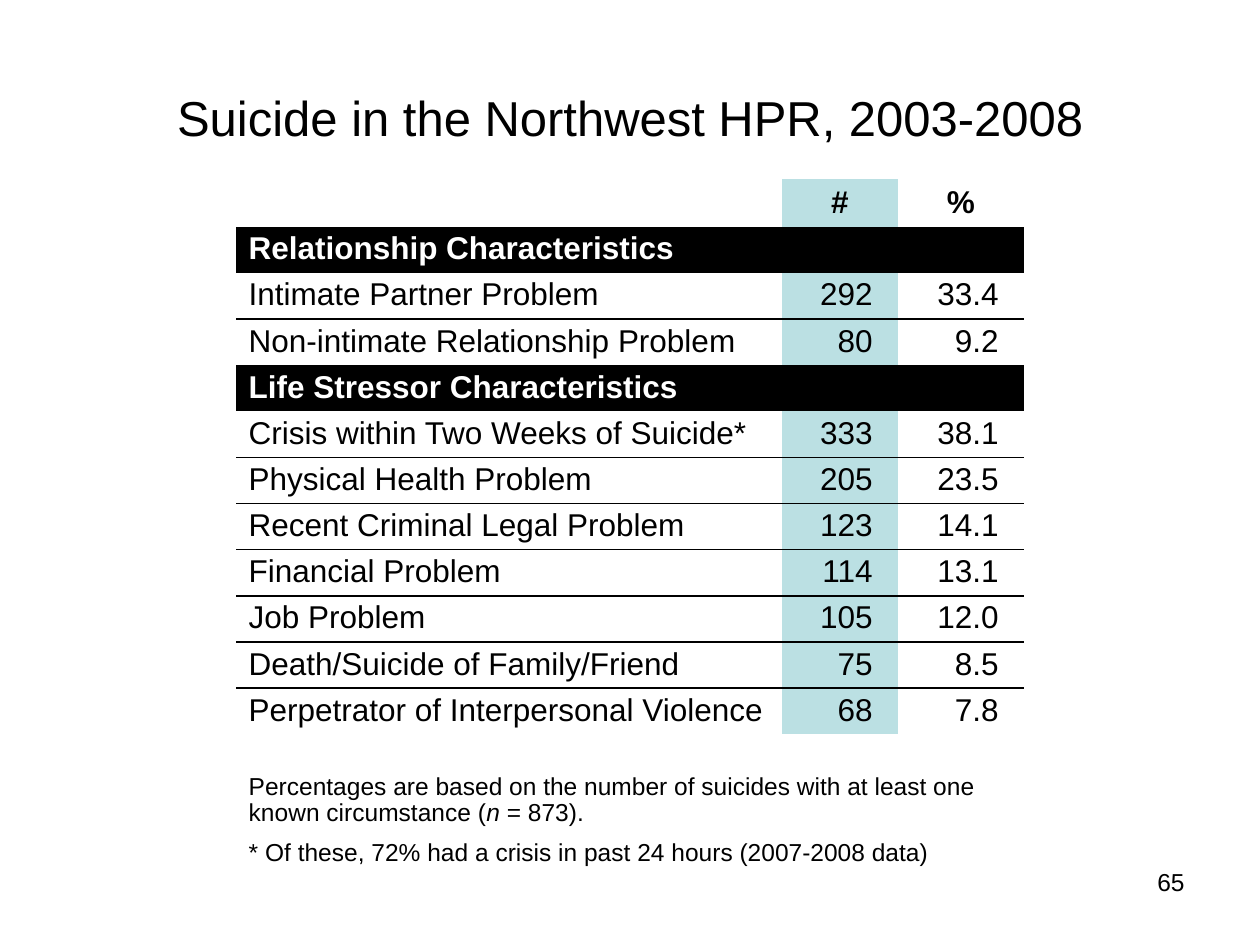
"""Build a slide with a table of suicide circumstances."""
from lxml import etree
from pptx import Presentation
from pptx.dml.color import RGBColor
from pptx.enum import text
from pptx.oxml.ns import qn
from pptx.util import Cm, Pt

COLORS = {"ink": "000000", "paper": "FFFFFF", "tint": "BBE0E3"}
FONT = "Arial"
LEFT, CENTER, RIGHT = text.PP_ALIGN.LEFT, text.PP_ALIGN.CENTER, text.PP_ALIGN.RIGHT

TITLE = "Suicide in the Northwest HPR, 2003-2008"
PAGE = "65"
HEAD = ("", "#", "%")
GROUPS = [
    ("Relationship Characteristics", [
        ("Intimate Partner Problem", "292", "33.4"),
        ("Non-intimate Relationship Problem", "80", "9.2"),
    ]),
    ("Life Stressor Characteristics", [
        ("Crisis within Two Weeks of Suicide*", "333", "38.1"),
        ("Physical Health Problem", "205", "23.5"),
        ("Recent Criminal Legal Problem", "123", "14.1"),
        ("Financial Problem", "114", "13.1"),
        ("Job Problem", "105", "12.0"),
        ("Death/Suicide of Family/Friend", "75", "8.5"),
        ("Perpetrator of Interpersonal Violence", "68", "7.8"),
    ]),
]
NOTES = [
    [("Percentages are based on the number of suicides with at least one "
      "known circumstance (", False), ("n ", True), ("= 873).", False)],
    [("* Of these, 72% had a crisis in past 24 hours (2007-2008 data)", False)],
]
COL_WIDTHS = (11, 2.34, 2.54)
HEAD_H, BODY_H, SPACER_H, NOTE_HS = 0.97, 0.93, 0.6, (1.4, 0.8)


def add_run(p, words, size, color="ink", bold=False, italic=False):
    r = p.add_run()
    r.text = words
    f = r.font
    f.name, f.size, f.bold, f.italic = FONT, Pt(size), bold, italic
    f.color.rgb = RGBColor.from_string(COLORS[color])


def set_borders(cell, top, bottom):
    tc_pr = cell._tc.get_or_add_tcPr()
    for side, ruled in (("L", False), ("R", False), ("T", top), ("B", bottom)):
        ln = etree.SubElement(tc_pr, qn(f"a:ln{side}"), w=str(Pt(1)))
        if ruled:
            fill = etree.SubElement(ln, qn("a:solidFill"))
            etree.SubElement(fill, qn("a:srgbClr"), val=COLORS["ink"])
        else:
            etree.SubElement(ln, qn("a:noFill"))


def fill_cell(cell, runs, size=18, align=LEFT, fill=None, color="ink",
              bold=False, right=0.25, top=False, bottom=False):
    set_borders(cell, top, bottom)
    if fill:
        cell.fill.solid()
        cell.fill.fore_color.rgb = RGBColor.from_string(COLORS[fill])
    else:
        cell.fill.background()
    cell.vertical_anchor = text.MSO_ANCHOR.BOTTOM
    cell.margin_right = Cm(right)
    p = cell.text_frame.paragraphs[0]
    p.alignment, p.line_spacing = align, 0.95
    for words, italic in runs:
        add_run(p, words, size, color, bold, italic)
    if not runs:
        etree.SubElement(p._p, qn("a:endParaRPr"), sz="600")


def fill_row(table, i, values, **style):
    for j, value in enumerate(values):
        number = {"align": RIGHT, "right": 0.51} if j else {}
        fill_cell(table.cell(i, j), [(value, False)] if value else [],
                  fill="tint" if j == 1 else None, **{**number, **style})


def fill_span(table, i, runs, **style):
    for j in range(len(COL_WIDTHS)):
        fill_cell(table.cell(i, j), [] if j else runs, right=0, **style)
    table.cell(i, 0).merge(table.cell(i, len(COL_WIDTHS) - 1))


def add_circumstances(s):
    body_count = sum(1 + len(rows) for _, rows in GROUPS)
    heights = [HEAD_H] + [BODY_H] * body_count + [SPACER_H, *NOTE_HS]
    table = s.shapes.add_table(len(heights), len(COL_WIDTHS), Cm(4.76), Cm(3.6),
                               Cm(sum(COL_WIDTHS)), Cm(sum(heights))).table
    table.first_row = table.horz_banding = False
    for col, width in zip(table.columns, COL_WIDTHS):
        col.width = Cm(width)
    for row, height in zip(table.rows, heights):
        row.height = Cm(height)

    fill_row(table, 0, HEAD, align=CENTER, bold=True, right=0.25)
    i = 1
    for name, rows in GROUPS:
        fill_span(table, i, [(name, False)], fill="ink", color="paper", bold=True)
        for k, values in enumerate(rows):
            fill_row(table, i + 1 + k, values, top=k > 0, bottom=k < len(rows) - 1)
        i += 1 + len(rows)
    for j in range(len(COL_WIDTHS)):
        fill_cell(table.cell(i, j), [])
    for k, runs in enumerate(NOTES, i + 1):
        fill_span(table, k, runs, size=14)


def main():
    prs = Presentation()
    prs.slide_width, prs.slide_height = Cm(25.4), Cm(19.05)
    s = prs.slides.add_slide(prs.slide_layouts[5])

    title = s.shapes.title
    title.left, title.top, title.width, title.height = Cm(1.27), Cm(0.76), Cm(22.86), Cm(3.18)
    tf = title.text_frame
    tf.vertical_anchor = text.MSO_ANCHOR.MIDDLE
    tf.paragraphs[0].alignment = CENTER
    add_run(tf.paragraphs[0], TITLE, 28)

    add_circumstances(s)

    tf = s.shapes.add_textbox(Cm(18.2), Cm(17.35), Cm(5.93), Cm(1.32)).text_frame
    tf.word_wrap = True
    tf.paragraphs[0].alignment = RIGHT
    add_run(tf.paragraphs[0], PAGE, 14)
    prs.save("out.pptx")


if __name__ == "__main__":
    main()
